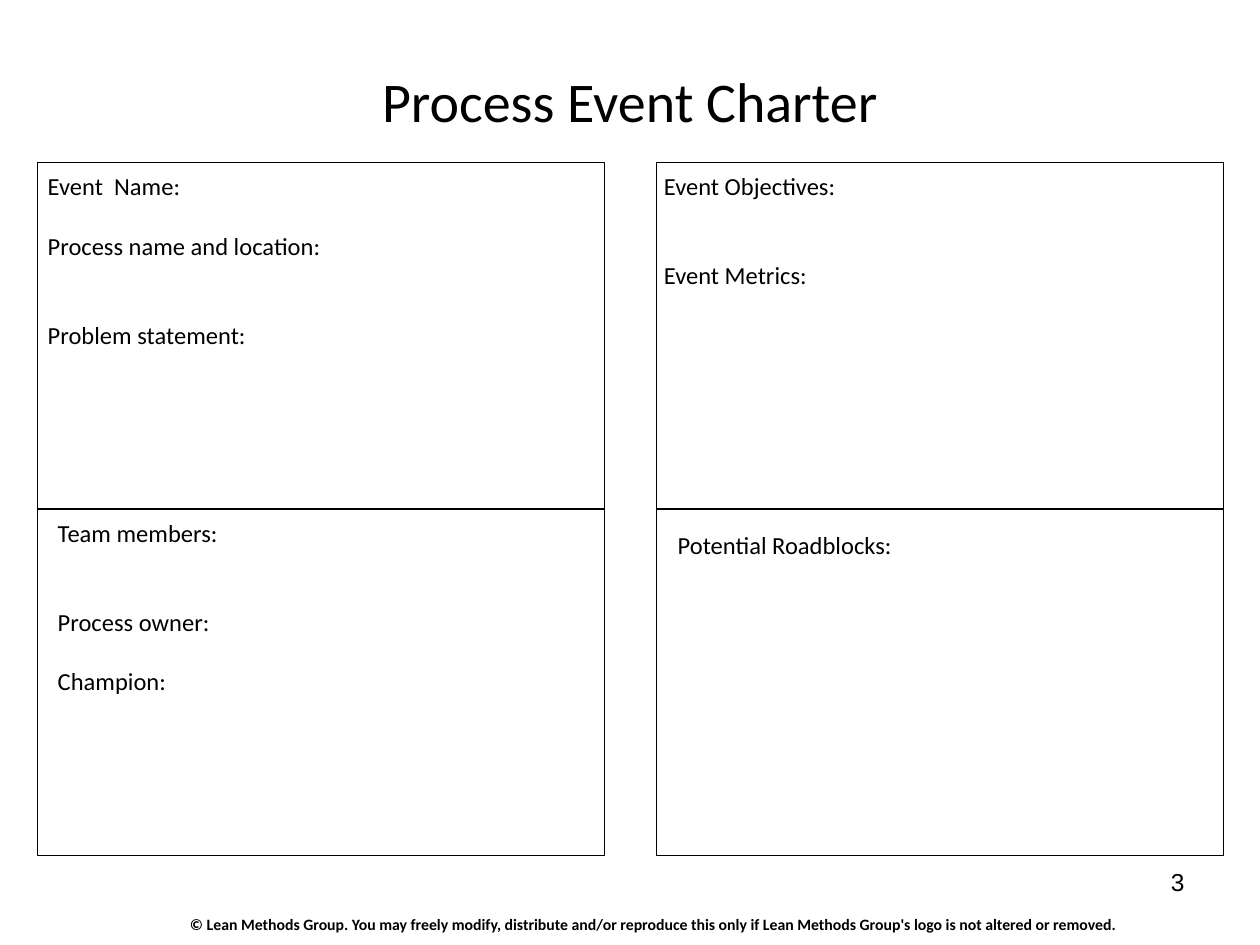
from pptx import Presentation, util as u
from pptx.dml.color import RGBColor
from pptx.enum import shapes, text

COLORS = {"ink": "000000"}
TITLE = "Process Event Charter"
PAGE = "3"
COPYRIGHT = ("© Lean Methods Group. You may freely modify, distribute and/or reproduce this only if "
             "Lean Methods Group's logo is not altered or removed.")

# Each panel: column, row, text offset, text size, (label, blank lines above)
PANELS = [
    (0, 0, (-0.02, 0.02), (2.39, 1.52),
     [("Event  Name:", 0), ("Process name and location:", 1), ("Problem statement:", 2)]),
    (1, 0, (-0.04, 0.02), (1.58, 1.04),
     [("Event Objectives:", 0), ("Event Metrics:", 2)]),
    (0, 1, (0.06, 0.02), (1.48, 1.52),
     [("Team members:", 0), ("Process owner:", 2), ("Champion:", 1)]),
    (1, 1, (0.07, 0.12), (1.92, 0.34),
     [("Potential Roadblocks:", 0)]),
]
LEFT, TOP = 0.3, 1.29
PANEL_W, PANEL_H, GAP = 4.5, 2.75, 0.41
LINE_PT = 17.1


def style(p, size, name="Calibri", bold=False):
    p.font.size = u.Pt(size)
    p.font.name = name
    p.font.bold = bold
    p.font.color.rgb = RGBColor.from_string(COLORS["ink"])


def add_text(s, box, lines, size, name="Calibri", bold=False, align=None, wrap=True,
             anchor=text.MSO_ANCHOR.TOP):
    tf = s.shapes.add_textbox(*map(u.Inches, box)).text_frame
    tf.word_wrap = wrap
    tf.vertical_anchor = anchor
    for i, (label, blanks) in enumerate(lines):
        p = tf.paragraphs[0] if i == 0 else tf.add_paragraph()
        p.text = label
        p.alignment = align
        if blanks:
            p.space_before = u.Pt(blanks * LINE_PT)
        style(p, size, name, bold)


def add_panel(s, x, y):
    sp = s.shapes.add_shape(shapes.MSO_SHAPE.RECTANGLE,
                            *map(u.Inches, (x, y, PANEL_W, PANEL_H)))
    sp.shadow.inherit = False
    sp.fill.background()
    sp.line.color.rgb = RGBColor.from_string(COLORS["ink"])
    sp.line.width = u.Pt(0.75)


def main():
    prs = Presentation()
    prs.slide_width, prs.slide_height = u.Inches(10), u.Inches(7.5)
    s = prs.slides.add_slide(prs.slide_layouts[5])

    title = s.shapes.title
    title.left, title.top, title.width, title.height = map(u.Inches, (0.5, 0.17, 9, 1.25))
    tf = title.text_frame
    tf.text = TITLE
    tf.vertical_anchor = text.MSO_ANCHOR.MIDDLE
    tf.paragraphs[0].alignment = text.PP_ALIGN.CENTER
    style(tf.paragraphs[0], 32)

    for col, row, (dx, dy), size, lines in PANELS:
        x = LEFT + col * (PANEL_W + GAP)
        y = TOP + row * PANEL_H
        add_panel(s, x, y)
        add_text(s, (x + dx, y + dy, *size), lines, 14, wrap=False)

    add_text(s, (7.17, 6.83, 2.33, 0.52), [(PAGE, 0)], 14, "Arial",
             align=text.PP_ALIGN.RIGHT)
    add_text(s, (1.41, 7.21, 7.66, 0.25), [(COPYRIGHT, 0)], 9, bold=True,
             anchor=text.MSO_ANCHOR.MIDDLE)
    prs.save("out.pptx")


if __name__ == "__main__":
    main()
